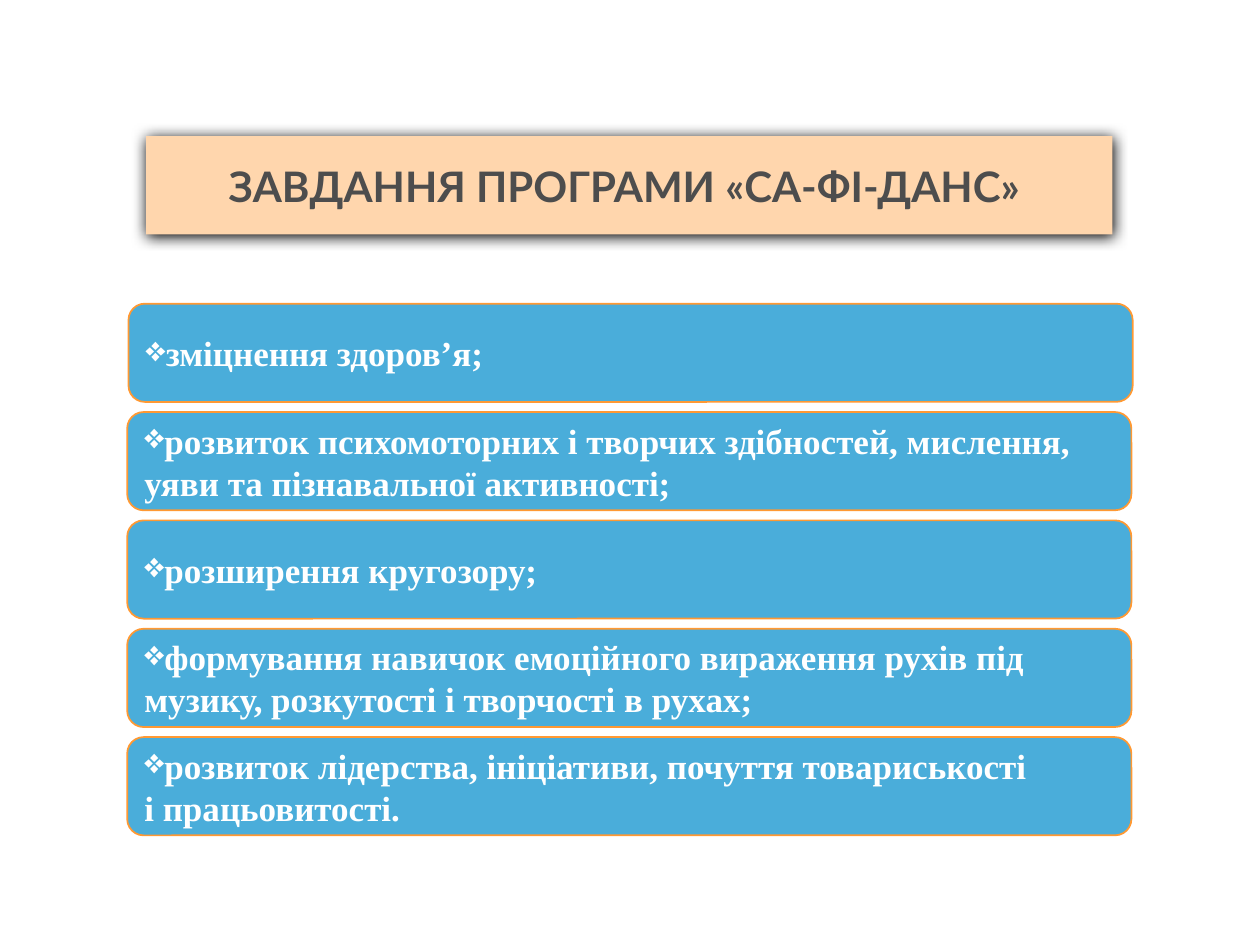
"""Build the slide listing the tasks of the dance programme."""
from lxml import etree
from pptx import Presentation
from pptx.dml.color import RGBColor
from pptx.enum import shapes, text
from pptx.oxml import ns
from pptx.util import Inches, Pt

COLORS = {"peach": "FFD6AD", "gray": "4D4D4D", "blue": "4AADDA",
          "orange": "FF9933", "white": "FFFFFF", "black": "000000"}
TITLE = {"name": "Lato", "size": Pt(24), "bold": True}
BODY = {"name": "Times New Roman", "size": Pt(20), "bold": True}
TASKS = [
    ["зміцнення здоров’я;"],
    ["розвиток психомоторних і творчих здібностей, мислення,",
     "уяви та пізнавальної активності;"],
    ["розширення кругозору;"],
    ["формування навичок емоційного вираження рухів під",
     "музику, розкутості і творчості в рухах;"],
    ["розвиток лідерства, ініціативи, почуття товариськості",
     "і працьовитості."],
]


def add_box(kind, left, top, width, fill):
    s = slide.shapes.add_shape(kind, Inches(left), Inches(top), Inches(width), Inches(0.78))
    s.shadow.inherit = False
    s.fill.solid()
    s.fill.fore_color.rgb = RGBColor.from_string(COLORS[fill])
    s.text_frame.word_wrap = True
    s.text_frame.vertical_anchor = text.MSO_ANCHOR.MIDDLE
    return s


def write(p, words, align, font, color):
    p.alignment = align
    r = p.add_run()
    r.text = words
    for key, value in font.items():
        setattr(r.font, key, value)
    r.font.color.rgb = RGBColor.from_string(COLORS[color])


prs = Presentation()
prs.slide_width, prs.slide_height = Inches(10), Inches(7.5)
slide = prs.slides.add_slide(prs.slide_layouts[6])

s = add_box(shapes.MSO_SHAPE.RECTANGLE, 1.16, 1.08, 7.67, "peach")
s.line.fill.background()
effects = s._element.spPr.find(ns.qn("a:effectLst"))
shadow = etree.SubElement(effects, ns.qn("a:outerShdw"), blurRad=str(Pt(8.5)),
                          dist=str(Pt(1)), dir="5400000", algn="ctr", rotWithShape="0")
etree.SubElement(shadow, ns.qn("a:srgbClr"), val=COLORS["black"])
write(s.text_frame.paragraphs[0], "ЗАВДАННЯ ПРОГРАМИ «СА-ФІ-ДАНС» ",
      text.PP_ALIGN.CENTER, TITLE, "gray")

for row, lines in enumerate(TASKS):
    left = 1.01 if row else 1.02
    s = add_box(shapes.MSO_SHAPE.ROUNDED_RECTANGLE, left, 2.41 + row * 0.86, 7.97, "blue")
    s.line.color.rgb = RGBColor.from_string(COLORS["orange"])
    s.line.width = Pt(1)
    tf = s.text_frame
    for i, words in enumerate(lines):
        p = tf.add_paragraph() if i else tf.paragraphs[0]
        if i == 0:
            etree.SubElement(p._p.get_or_add_pPr(), ns.qn("a:buChar"), char="❖")
        write(p, words, text.PP_ALIGN.LEFT, BODY, "white")

prs.save("out.pptx")
